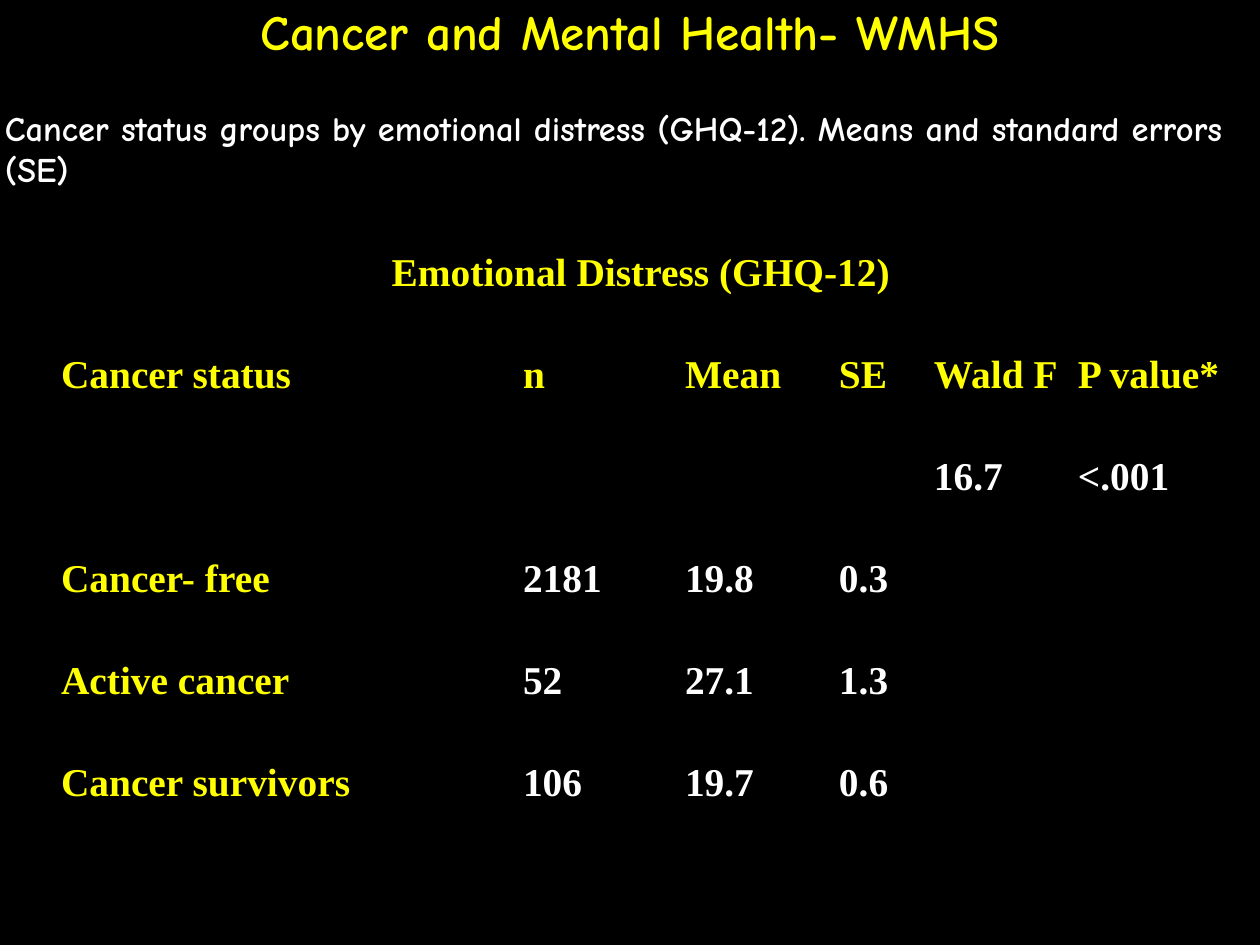
from dataclasses import dataclass

from lxml.etree import SubElement as Sub
from pptx import Presentation
from pptx.dml.color import RGBColor as RGB
from pptx.enum.text import MSO_ANCHOR as Anchor, MSO_AUTO_SIZE as Auto, PP_ALIGN as Align
from pptx.oxml.ns import qn
from pptx.util import Emu, Pt

# Content
TITLE = "Cancer and Mental Health- WMHS"
LEAD = ("Cancer status groups by emotional distress (GHQ-12). "
        "Means and standard errors (SE)")
BAND = "Emotional Distress (GHQ-12)"
HEADS = ("Cancer status", "n", "Mean", "SE", "Wald F", "P value*")
ROWS = [
    ("", "", "", "", "16.7", "<.001"),
    ("Cancer- free", "2181", "19.8", "0.3", "", ""),
    ("Active cancer", "52", "27.1", "1.3", "", ""),
    ("Cancer survivors", "106", "19.7", "0.6", "", ""),
]


@dataclass(frozen=True)
class Theme:
    back: str = "000000"
    key: str = "FFFF00"
    text: str = "FFFFFF"
    hand: str = "Comic Neue"
    serif: str = "Times New Roman"
    title: int = 40
    lead: int = 28
    cell: int = 32


T = Theme()

# Layout in px
WIDE, HIGH = 1260, 945
COLS = (462, 162, 154, 95, 144, 155)
ROW = 102
LEFT, TOP = 55, 245
NO_STYLE = "{2D5ABB26-0587-4C30-8999-92F81FD0307C}"


def px(n):
    return Emu(n * 10320)


def write(frame, text, *, size, color, font, align=Align.LEFT, lines=None):
    para = frame.paragraphs[0]
    props = para._p.get_or_add_pPr()
    props.set("marL", "0")
    props.set("indent", "0")
    Sub(props, qn("a:buNone"))
    para.alignment = align
    para.space_before = Pt(0)
    if lines:
        para.line_spacing = lines
    run = para.add_run()
    run.text = text
    run.font.size, run.font.name, run.font.bold = Pt(size), font, True
    run.font.color.rgb = RGB.from_string(color)


def place(shape, top, high, anchor):
    shape.left, shape.top = px(0), px(top)
    shape.width, shape.height = px(WIDE), px(high)
    frame = shape.text_frame
    frame.auto_size, frame.word_wrap = Auto.NONE, True
    frame.vertical_anchor = anchor
    frame.margin_left = frame.margin_right = px(5)
    frame.margin_top = frame.margin_bottom = px(5)
    return frame


def edge(cell, sides):
    props = cell._tc.get_or_add_tcPr()
    for side in sides:
        line = Sub(props, qn("a:ln" + side), w=str(Pt(1)))
        fill = Sub(line, qn("a:solidFill"))
        Sub(fill, qn("a:srgbClr"), val=T.back)


def fill_table(slide):
    count = len(ROWS) + 2
    frame = slide.shapes.add_table(count, len(COLS), px(LEFT), px(TOP),
                                   px(sum(COLS)), px(ROW * count))
    table = frame.table
    table.first_row = table.horz_banding = False
    for style in frame.element.iter(qn("a:tableStyleId")):
        style.text = NO_STYLE
    for col, wide in zip(table.columns, COLS):
        col.width = px(wide)
    for row in table.rows:
        row.height = px(ROW)
    table.cell(0, 0).merge(table.cell(0, len(COLS) - 1))

    last = len(COLS) - 1
    grid = [(BAND,) + ("",) * last, HEADS, *ROWS]
    for r, row in enumerate(grid):
        for c, text in enumerate(row):
            cell = table.cell(r, c)
            cell.margin_left = cell.margin_right = px(6)
            cell.margin_top = cell.margin_bottom = 0
            edge(cell, ["L"] * (c == 0) + ["R"] * (c == last) + ["T", "B"])
            cell.fill.solid()
            cell.fill.fore_color.rgb = RGB.from_string(T.back)
            if text:
                write(cell.text_frame, text, size=T.cell, font=T.serif,
                      color=T.key if r < 2 or c == 0 else T.text,
                      align=Align.LEFT if r else Align.CENTER, lines=1.15)


def main():
    deck = Presentation()
    deck.slide_width, deck.slide_height = px(WIDE), px(HIGH)
    slide = deck.slides.add_slide(deck.slide_layouts[1])
    slide.background.fill.solid()
    slide.background.fill.fore_color.rgb = RGB.from_string(T.back)

    # Title and lead text
    title, lead = slide.placeholders
    write(place(title, -66, 131, Anchor.BOTTOM), TITLE, size=T.title,
          color=T.key, font=T.hand, align=Align.CENTER)
    write(place(lead, 102, 106, Anchor.TOP), LEAD, size=T.lead,
          color=T.text, font=T.hand)

    # Results
    fill_table(slide)
    deck.save("out.pptx")


if __name__ == "__main__":
    main()
